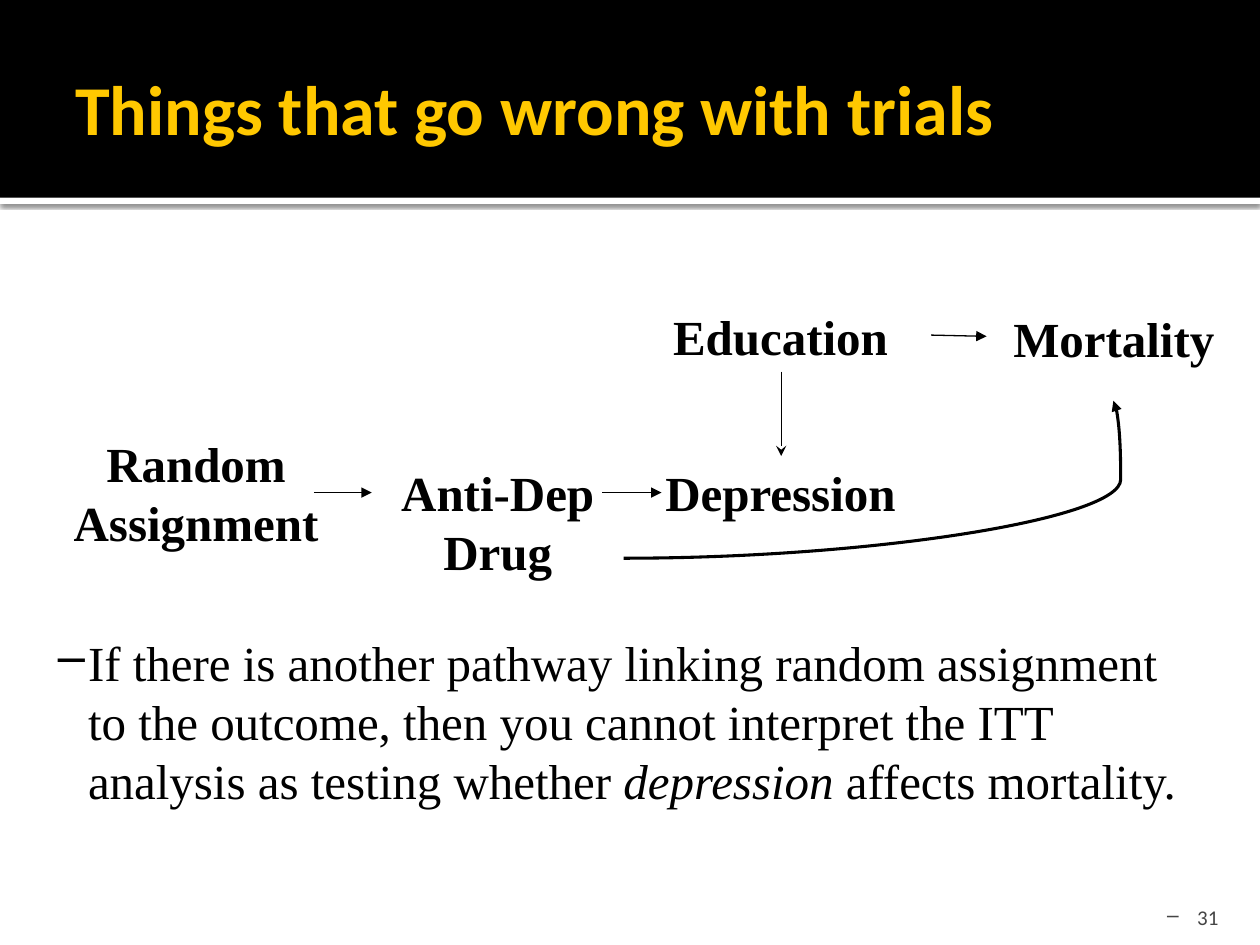
from lxml.etree import SubElement
from pptx import Presentation
from pptx.dml.color import RGBColor
from pptx.enum.shapes import MSO_CONNECTOR, MSO_SHAPE
from pptx.enum.text import MSO_ANCHOR, PP_ALIGN
from pptx.oxml.ns import qn
from pptx.util import Pt

BLACK = RGBColor(0, 0, 0)
WHITE = RGBColor(255, 255, 255)
GOLD = RGBColor(0xFF, 0xC8, 0x00)
GRAY = RGBColor(0x45, 0x45, 0x45)

BODY = {"name": "Times New Roman", "size": Pt(28)}
LABEL = {**BODY, "bold": True}
TITLE = {"name": "Calibri", "size": Pt(40), "bold": True}
NUMBER = {"name": "Calibri", "size": Pt(12)}

LABELS = [
    ("Education", 360, 171.4, 172, 41),
    ("Depression", 360, 260.6, 172, 41),
    ("Mortality", 564.5, 172.8, 144, 41),
    ("Random Assignment", 26, 244.1, 172, 75),
    ("Anti-Dep Drug", 212.4, 260.6, 144, 75),
]
ARROWS = [
    (446.4, 212.4, 446.4, 260.6, "stealth"),
    (532.1, 191.5, 563.8, 192.2, "triangle"),
    (179.3, 281.5, 212.4, 281.5, "triangle"),
    (344.2, 281.5, 378, 281.5, "triangle"),
]
CLAIM = [
    ("If there is another pathway linking random assignment to the outcome, "
     "then you cannot interpret the ITT analysis as testing whether ", False),
    ("depression ", True),
    ("affects mortality.", False),
]


def add_node(parent, tag, **attrs):
    return SubElement(parent, qn(tag), attrs)


def add_bar(slide, top, height, color):
    bar = slide.shapes.add_shape(MSO_SHAPE.RECTANGLE, 0, Pt(top), Pt(720), Pt(height))
    bar.shadow.inherit = False
    bar.fill.solid()
    bar.fill.fore_color.rgb = color
    bar.line.fill.background()
    return bar


def add_shade(bar):
    effects = bar._element.spPr.find(qn("a:effectLst"))
    shade = add_node(effects, "a:outerShdw", blurRad=str(Pt(2.5)), dist=str(Pt(0.8)),
                     dir="5400000", algn="tl", rotWithShape="0")
    color = add_node(shade, "a:srgbClr", val=str(BLACK))
    add_node(color, "a:alpha", val="60000")


def add_text(slide, parts, place, style, color=BLACK, align=PP_ALIGN.LEFT, **frame):
    box = slide.shapes.add_textbox(*map(Pt, place))
    text = box.text_frame
    for key, value in {"word_wrap": True, **frame}.items():
        setattr(text, key, value)
    para = text.paragraphs[0]
    para.alignment = align
    for words, slant in parts:
        run = para.add_run()
        run.text = words
        for key, value in {**style, "italic": slant}.items():
            setattr(run.font, key, value)
        run.font.color.rgb = color
    return para


def add_dash(para):
    props = para._p.get_or_add_pPr()
    props.set("marL", str(Pt(17.25)))
    props.set("indent", str(-Pt(17.25)))
    add_node(props, "a:buChar", char="–")


def add_arrow(slide, ends, head, kind=MSO_CONNECTOR.STRAIGHT, width=0.75):
    arrow = slide.shapes.add_connector(kind, *map(Pt, ends))
    arrow.line.color.rgb = BLACK
    arrow.line.width = Pt(width)
    add_node(arrow.line._get_or_add_ln(), "a:tailEnd", type=head)
    add_node(arrow._element.spPr, "a:effectLst")
    return arrow


def add_curve(slide):
    curve = add_arrow(slide, (356.4, 319, 636.2, 229), "triangle",
                      MSO_CONNECTOR.CURVE, 1.75)
    shape = curve._element.spPr.find(qn("a:prstGeom"))
    guides = shape.find(qn("a:avLst"))
    add_node(guides, "a:gd", name="adj1", fmla="val 101500")


def main():
    deck = Presentation()
    deck.slide_width, deck.slide_height = Pt(720), Pt(540)
    slide = deck.slides.add_slide(deck.slide_layouts[6])

    add_shade(add_bar(slide, 113, 3.6, WHITE))
    add_bar(slide, 0, 113, BLACK)
    add_text(slide, [("Things that go wrong with trials", False)], (36, 12.2, 648, 98.6),
             TITLE, GOLD, vertical_anchor=MSO_ANCHOR.MIDDLE, margin_right=Pt(3.6))
    for words, *place in LABELS:
        add_text(slide, [(words, False)], place, LABEL, align=PP_ALIGN.CENTER)
    for *ends, head in ARROWS:
        add_arrow(slide, ends, head)
    add_curve(slide)
    add_dash(add_text(slide, CLAIM, (26, 357.8, 667.4, 108.7), BODY))
    add_dash(add_text(slide, [("31", False)], (645.8, 509.8, 57.6, 21.6), NUMBER, GRAY,
                      PP_ALIGN.RIGHT, vertical_anchor=MSO_ANCHOR.BOTTOM, margin_bottom=0))
    deck.save("out.pptx")


if __name__ == "__main__":
    main()
